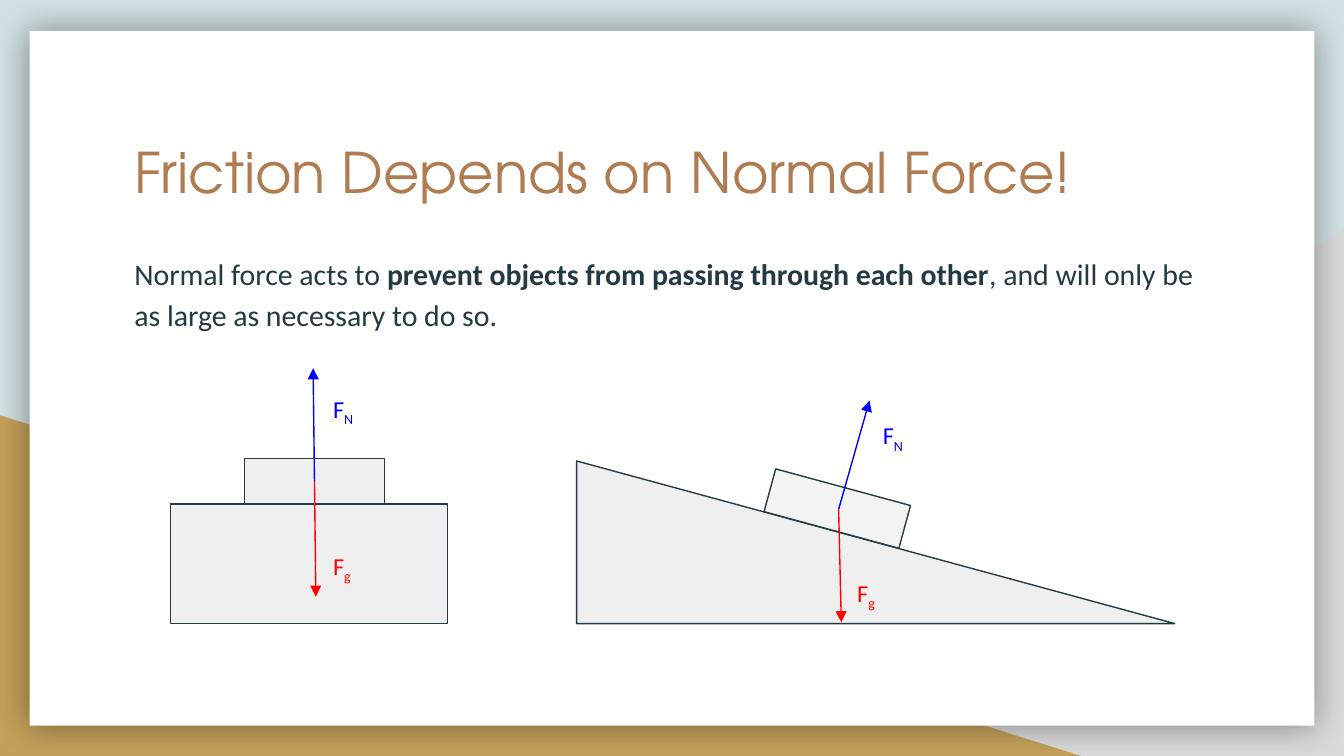
from lxml import etree
from pptx import Presentation, util as u
from pptx.dml.color import RGBColor
from pptx.enum import shapes, text
from pptx.oxml import parse_xml
from pptx.oxml.ns import nsdecls, qn

Inches, Pt = u.Inches, u.Pt
COLORS = {
    "background": "D0E0E3", "gray": "D9D9D9", "gold": "C4A15A", "card": "FFFFFF",
    "solid": "EFEFEF", "tilted": "F3F3F3", "ink": "233A44", "title": "AF7B51",
    "normal": "0000FF", "gravity": "FF0000",
}
RGB = {name: RGBColor.from_string(value) for name, value in COLORS.items()}
BODY_FONT, TITLE_FONT = "Calibri", "TeX Gyre Adventor"
RECTANGLE = shapes.MSO_SHAPE.RECTANGLE
TRIANGLE = shapes.MSO_SHAPE.RIGHT_TRIANGLE


def add_filled(container, kind, box, fill, outlined=False):
    shape = container.add_shape(kind, *map(Inches, box))
    shape.shadow.inherit = False
    shape.fill.solid()
    shape.fill.fore_color.rgb = RGB[fill]
    if outlined:
        shape.line.color.rgb = RGB["ink"]
        shape.line.width = Pt(0.75)
    else:
        shape.line.fill.background()
    return shape


def set_frame(frame):
    frame.word_wrap = True
    frame.auto_size = text.MSO_AUTO_SIZE.NONE
    frame.vertical_anchor = text.MSO_ANCHOR.TOP
    frame.margin_left = frame.margin_right = Inches(0.1)
    frame.margin_top = frame.margin_bottom = Inches(0.1)
    paragraph = frame.paragraphs[0]
    paragraph.alignment = text.PP_ALIGN.LEFT
    return paragraph


# A 16:9 slide
presentation = Presentation()
presentation.slide_width = Inches(10)
presentation.slide_height = Inches(10) * 9 // 16
slide = presentation.slides.add_slide(presentation.slide_layouts[1])
slide.background.fill.solid()
slide.background.fill.fore_color.rgb = RGB["background"]
title, body = slide.placeholders

# Backdrop: two corner triangles and a white card, behind the placeholders
gray_corner = add_filled(slide.shapes, TRIANGLE, (3.92, 1.7, 6.08, 3.93), "gray")
gray_corner.element.spPr.find(qn("a:xfrm")).set("flipH", "1")
gold_corner = add_filled(slide.shapes, TRIANGLE, (0, 3.09, 8.06, 2.54), "gold")
card = add_filled(slide.shapes, RECTANGLE, (0.22, 0.23, 9.56, 5.17), "card")
effects = card.element.spPr.find(qn("a:effectLst"))
effects.append(parse_xml(
    f'<a:outerShdw {nsdecls("a")} blurRad="{Pt(18)}" dist="0" dir="0" algn="ctr" rotWithShape="0">'
    '<a:srgbClr val="000000"><a:alpha val="40000"/></a:srgbClr></a:outerShdw>'))
for shape in (gray_corner, gold_corner, card):
    title.element.addprevious(shape.element)

# Title
title.left, title.top, title.width, title.height = map(Inches, (0.9, 0.92, 8.21, 1.04))
title.text_frame.text = "Friction Depends on Normal Force!"
font = set_frame(title.text_frame).runs[0].font
font.name, font.size, font.color.rgb = TITLE_FONT, Pt(30), RGB["title"]

# Body text
body.left, body.top, body.width, body.height = map(Inches, (0.9, 1.76, 8.21, 0.77))
paragraph = set_frame(body.text_frame)
paragraph.line_spacing = 1.15
paragraph.space_before, paragraph.space_after = Pt(0), Pt(12)
properties = paragraph._p.get_or_add_pPr()
properties.set("marL", "0")
properties.set("indent", "0")
etree.SubElement(properties, qn("a:buNone"))
for words, bold in (
    ("Normal force acts to ", False),
    ("prevent objects from passing through each other", True),
    (", and will only be as large as necessary to do so.", False),
):
    run = paragraph.add_run()
    run.text = words
    font = run.font
    font.name, font.size, font.bold, font.color.rgb = BODY_FONT, Pt(16), bold, RGB["ink"]

# Force diagrams: solids (kind, box, fill, rotation), arrow origin,
# then forces (subscript, color, arrow tip, label corner)
diagrams = [
    ([(TRIANGLE, (4.29, 3.43, 4.45, 1.21), "solid", 0),
      (RECTANGLE, (5.71, 3.62, 1.04, 0.33), "tilted", 15.2)],
     (6.24, 3.79),
     [("N", "normal", (6.47, 2.98), (6.47, 3.03)),
      ("g", "gravity", (6.26, 4.63), (6.28, 4.2))]),
    ([(RECTANGLE, (1.82, 3.41, 1.04, 0.34), "solid", 0),
      (RECTANGLE, (1.27, 3.75, 2.06, 0.89), "solid", 0)],
     (2.34, 3.58),
     [("N", "normal", (2.33, 2.74), (2.38, 2.83)),
      ("g", "gravity", (2.35, 4.44), (2.38, 4))]),
]
for solids, origin, forces in diagrams:
    group = slide.shapes.add_group_shape().shapes
    for kind, box, fill, rotation in solids:
        add_filled(group, kind, box, fill, outlined=True).rotation = rotation
    for subscript, color, tip, corner in forces:
        arrow = group.add_connector(shapes.MSO_CONNECTOR.STRAIGHT, *map(Inches, origin + tip))
        arrow.line.color.rgb = RGB[color]
        arrow.line.width = Pt(0.75)
        etree.SubElement(arrow.line._get_or_add_ln(), qn("a:tailEnd"), type="triangle")
        etree.SubElement(arrow.element.spPr, qn("a:effectLst"))

        label = group.add_textbox(*map(Inches, corner + (0.49, 0.39)))
        paragraph = set_frame(label.text_frame)
        for letter in ("F", subscript):
            run = paragraph.add_run()
            run.text = letter
            font = run.font
            font.name, font.size, font.color.rgb = BODY_FONT, Pt(13), RGB[color]
        run._r.get_or_add_rPr().set("baseline", "-25000")

presentation.save("out.pptx")
